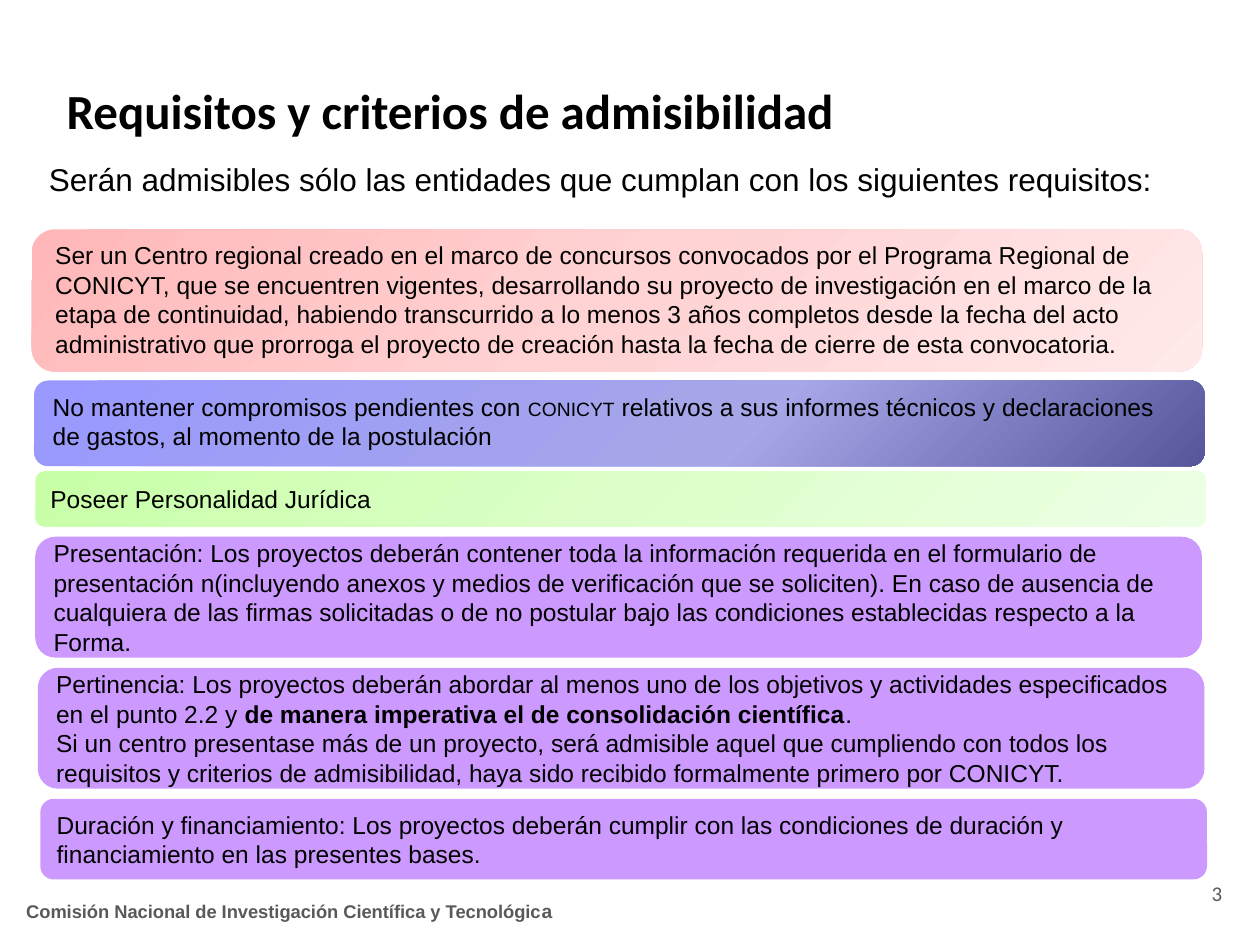
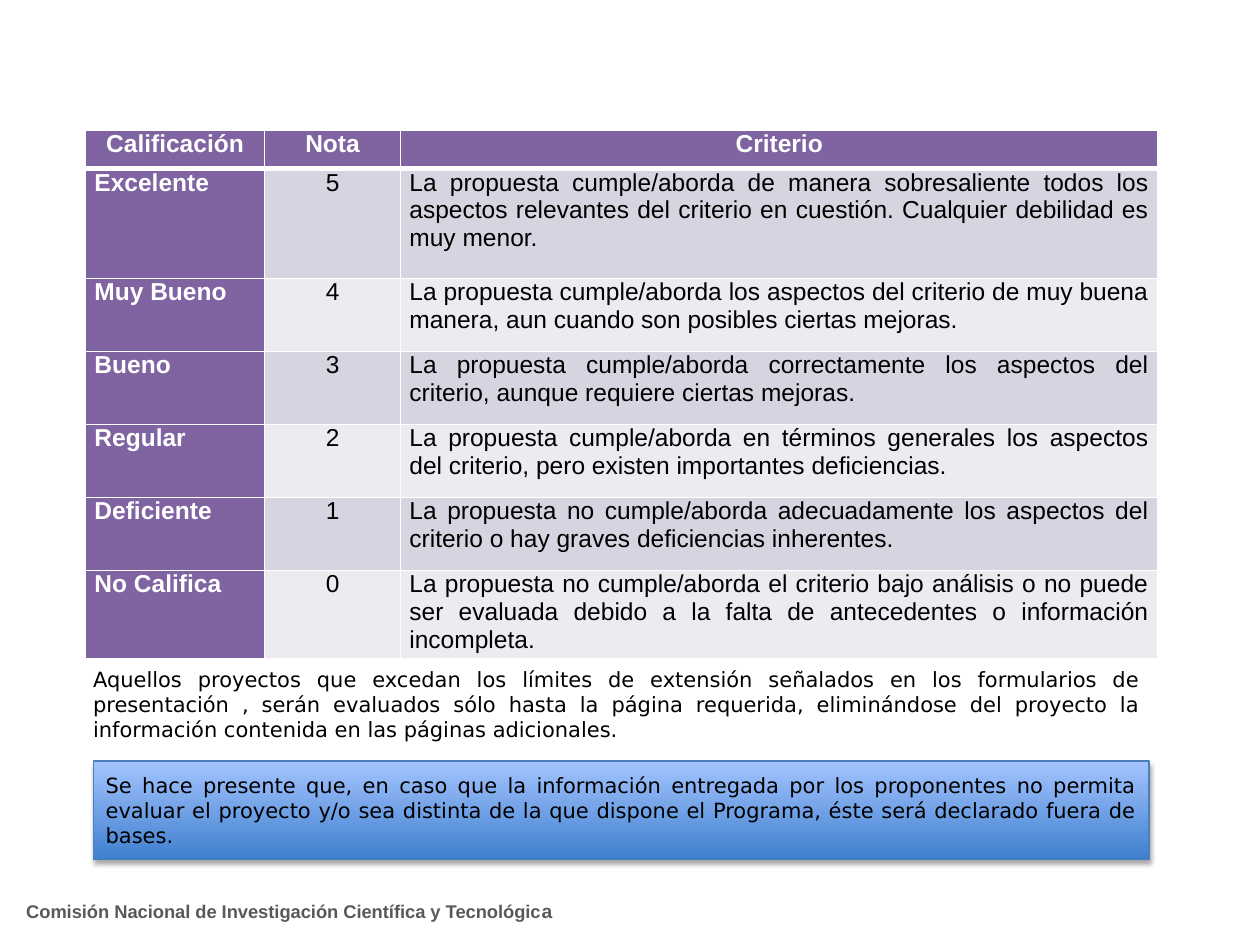
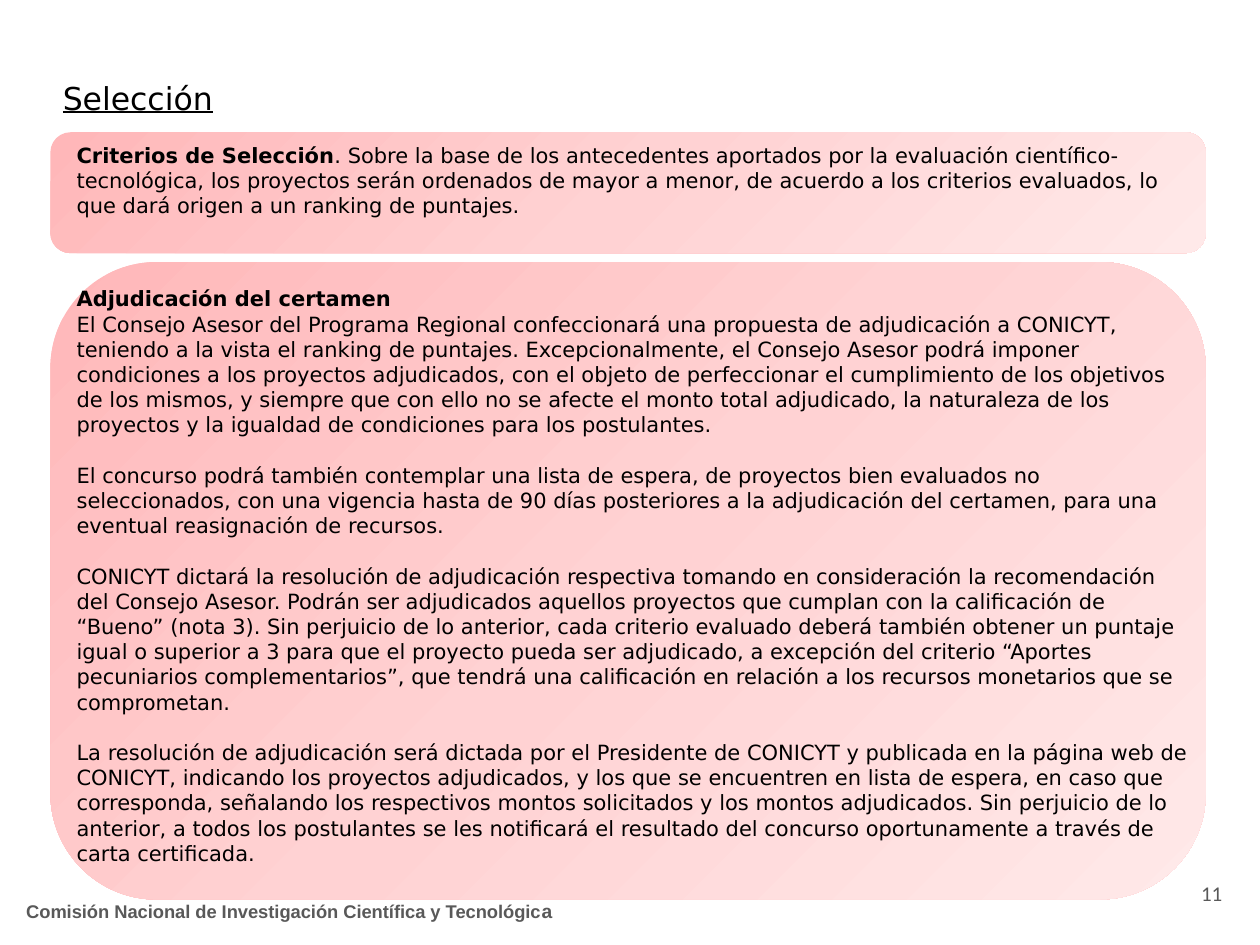
from lxml.etree import SubElement
from pptx import Presentation
from pptx.dml.color import RGBColor as Rgb
from pptx.enum.shapes import MSO_SHAPE as Preset
from pptx.enum.text import MSO_ANCHOR as Anchor, PP_ALIGN as Align
from pptx.oxml.ns import qn
from pptx.util import Inches, Pt

COLOURS = {
    "text": "000000",
    "muted": "595959",
    "white": "FFFFFF",
    "lilac": "CC99FF",
    "header": "8064A2",
    "odd_row": "D8D3E0",
    "even_row": "EDEAF0",
    "note_line": "4B7EBC",
}
GRADIENTS = {
    "pink": ([(0, "FFB7B9"), (50, "FFD2D3"), (100, "FFE9E9")], 45),
    "green": ([(0, "C8FFA7"), (50, "DCFFC9"), (100, "EDFFE5")], 45),
    "blue": ([(0, "3F80CE"), (100, "A4C4FF")], 270),
    "indigo": ([(0, "56569C"), (39, "A6A6E8"), (100, "9999FF")], None),
}
BODY = {"name": "Arial", "size": Pt(14)}
DETAIL = {"name": "DejaVu Sans", "size": Pt(12)}
TITLE = {"name": "Calibri", "size": Pt(28), "bold": True}
INTRO = {"name": "Arial", "size": Pt(18)}
SECTION = {"name": "DejaVu Sans", "size": Pt(18), "underline": True}
NUMBER = {"name": "Calibri", "size": Pt(12)}
FOOTER = {"name": "Arial", "size": Pt(10.5), "bold": True}
BOLD = {"bold": True}
JUSTIFIED = {"alignment": Align.JUSTIFY}

FOOTER_TEXT = [
    [("Comisión Nacional de Investigación Científica y Tecnológic", {}), ("a", {"size": Pt(11)})]
]
CENTRE = "Ser un Centro regional creado en el marco de concursos convocados por el Programa Regional de CONICYT, que se encuentren vigentes, desarrollando su proyecto de investigación en el marco de la etapa de continuidad, habiendo transcurrido a lo menos 3 años completos desde la fecha del acto administrativo que prorroga el proyecto de creación hasta la fecha de cierre de esta convocatoria."
COMMITMENTS = [
    ("No mantener compromisos pendientes con ", {}),
    ("CONICYT", {"size": Pt(11)}),
    (" relativos a sus informes técnicos y declaraciones de gastos, al momento de la postulación", {}),
]
PRESENTATION = "Presentación: Los proyectos deberán contener toda la información requerida en el formulario de presentación n(incluyendo anexos y medios de verificación que se soliciten). En caso de ausencia de cualquiera de las firmas solicitadas o de no postular bajo las condiciones establecidas respecto a la Forma."
RELEVANCE = [
    [
        ("Pertinencia: Los proyectos deberán abordar al menos uno de los objetivos y actividades especificados en el punto 2.2 y ", {}),
        ("de manera imperativa el de consolidación científica", BOLD),
        (".", {}),
    ],
    "Si un centro presentase más de un proyecto, será admisible aquel que cumpliendo con todos los requisitos y criterios de admisibilidad, haya sido recibido formalmente primero por CONICYT.",
]
DURATION = "Duración y financiamiento: Los proyectos deberán cumplir con las condiciones de duración y financiamiento en las presentes bases."
GRADES = [
    ("Calificación", "Nota", "Criterio"),
    ("Excelente", "5", "La propuesta cumple/aborda de manera sobresaliente todos los aspectos relevantes del criterio en cuestión. Cualquier debilidad es muy menor."),
    ("Muy Bueno", "4", "La propuesta cumple/aborda los aspectos del criterio de muy buena manera, aun cuando son posibles ciertas mejoras."),
    ("Bueno", "3", "La propuesta cumple/aborda correctamente los aspectos del criterio, aunque requiere ciertas mejoras."),
    ("Regular", "2", "La propuesta cumple/aborda en términos generales los aspectos del criterio, pero existen importantes deficiencias."),
    ("Deficiente", "1", "La propuesta no cumple/aborda adecuadamente los aspectos del criterio o hay graves deficiencias inherentes."),
    ("No Califica", "0", "La propuesta no cumple/aborda el criterio bajo análisis o no puede ser evaluada debido a la falta de antecedentes o información incompleta."),
]
LENGTH_LIMIT = "Aquellos proyectos que excedan los límites de extensión señalados en los formularios de presentación , serán evaluados sólo hasta la página requerida, eliminándose del proyecto la información contenida en las páginas adicionales."
WARNING = "Se hace presente que, en caso que la información entregada por los proponentes no permita evaluar el proyecto y/o sea distinta de la que dispone el Programa, éste será declarado fuera de bases."
SELECTION = [
    ("Criterios de Selección", BOLD),
    (". Sobre la base de los antecedentes aportados por la evaluación científico-tecnológica, los proyectos serán ordenados de mayor a menor, de acuerdo a los criterios evaluados, lo que dará origen a un ranking de puntajes.", {}),
]
AWARD = [
    [("Adjudicación del certamen", BOLD)],
    "El Consejo Asesor del Programa Regional confeccionará una propuesta de adjudicación a CONICYT, teniendo a la vista el ranking de puntajes. Excepcionalmente, el Consejo Asesor podrá imponer condiciones a los proyectos adjudicados, con el objeto de perfeccionar el cumplimiento de los objetivos de los mismos, y siempre que con ello no se afecte el monto total adjudicado, la naturaleza de los proyectos y la igualdad de condiciones para los postulantes.",
    "El concurso podrá también contemplar una lista de espera, de proyectos bien evaluados no seleccionados, con una vigencia hasta de 90 días posteriores a la adjudicación del certamen, para una eventual reasignación de recursos.",
    "CONICYT dictará la resolución de adjudicación respectiva tomando en consideración la recomendación del Consejo Asesor. Podrán ser adjudicados aquellos proyectos que cumplan con la calificación de “Bueno” (nota 3). Sin perjuicio de lo anterior, cada criterio evaluado deberá también obtener un puntaje igual o superior a 3 para que el proyecto pueda ser adjudicado, a excepción del criterio “Aportes pecuniarios complementarios”, que tendrá una calificación en relación a los recursos monetarios que se comprometan.",
    "La resolución de adjudicación será dictada por el Presidente de CONICYT y publicada en la página web de CONICYT, indicando los proyectos adjudicados, y los que se encuentren en lista de espera, en caso que corresponda, señalando los respectivos montos solicitados y los montos adjudicados. Sin perjuicio de lo anterior, a todos los postulantes se les notificará el resultado del concurso oportunamente a través de carta certificada.",
]


def apply(target, values):
    for attribute, value in values.items():
        setattr(target, attribute, value)


def rgb(name):
    return Rgb.from_string(COLOURS[name])


def write(frame, paragraphs, font, layout=None, colour="text"):
    frame.word_wrap = True
    for index, content in enumerate(paragraphs):
        paragraph = frame.paragraphs[0] if index == 0 else frame.add_paragraph()
        apply(paragraph, {"alignment": Align.LEFT, **(layout or {})})
        runs = [(content, {})] if isinstance(content, str) else content
        for text, changes in runs:
            run = paragraph.add_run()
            run.text = text
            apply(run.font, {**font, **changes})
            run.font.color.rgb = rgb(colour)


def add_text(slide, place, paragraphs, font, layout=None, colour="text", anchor=Anchor.TOP):
    frame = slide.shapes.add_textbox(*map(Inches, place)).text_frame
    frame.vertical_anchor = anchor
    write(frame, paragraphs, font, layout, colour)
    return frame


def fill_gradient(shape, name):
    stops, angle = GRADIENTS[name]
    shape.fill.gradient()
    gradient = shape._element.spPr.find(qn("a:gradFill"))
    for child in list(gradient):
        gradient.remove(child)
    stop_list = SubElement(gradient, qn("a:gsLst"))
    for position, colour in stops:
        stop = SubElement(stop_list, qn("a:gs"), pos=str(position * 1000))
        SubElement(stop, qn("a:srgbClr"), val=colour)
    if angle is None:
        radial = SubElement(gradient, qn("a:path"), path="circle")
        SubElement(radial, qn("a:fillToRect"), l="100000", t="100000")
    else:
        SubElement(gradient, qn("a:lin"), ang=str(angle * 60000), scaled="0")


def add_box(slide, place, fill, paragraphs=(), font=BODY, layout=None, preset=Preset.ROUNDED_RECTANGLE):
    box = slide.shapes.add_shape(preset, *map(Inches, place))
    box.shadow.inherit = False
    box.line.fill.background()
    if fill in GRADIENTS:
        fill_gradient(box, fill)
    else:
        box.fill.solid()
        box.fill.fore_color.rgb = rgb(fill)
    box.text_frame.vertical_anchor = Anchor.MIDDLE
    write(box.text_frame, paragraphs, font, layout)
    return box


def add_soft_shadow(box):
    effects = box._element.spPr.find(qn("a:effectLst"))
    shadow = SubElement(effects, qn("a:outerShdw"), blurRad=str(Pt(3.1)), dist=str(Pt(1.8)),
                        dir="5400000", rotWithShape="0")
    black = SubElement(shadow, qn("a:srgbClr"), val=COLOURS["text"])
    SubElement(black, qn("a:alpha"), val="35000")


def add_borders(cell, top, bottom):
    properties = cell._tc.get_or_add_tcPr()
    for side, width in (("L", 1), ("R", 1), ("T", top), ("B", bottom)):
        border = SubElement(properties, qn(f"a:ln{side}"), w=str(Pt(width)))
        fill = SubElement(border, qn("a:solidFill"))
        SubElement(fill, qn("a:srgbClr"), val=COLOURS["white"])


def add_grades(slide, place, widths, heights):
    table = slide.shapes.add_table(len(GRADES), len(widths), *map(Inches, place)).table
    for column, width in zip(table.columns, widths):
        column.width = Inches(width)
    for row, height in zip(table.rows, heights):
        row.height = Inches(height)
    for r, texts in enumerate(GRADES):
        for c, text in enumerate(texts):
            cell = table.cell(r, c)
            heading = r == 0 or c == 0
            centred = r == 0 or c == 1
            apply(cell, {"margin_left": Inches(0.07), "margin_right": Inches(0.07),
                         "margin_top": 0, "margin_bottom": 0})
            add_borders(cell, 3 if r == 1 else 1, 3 if r == 0 else 1)
            cell.fill.solid()
            cell.fill.fore_color.rgb = rgb("header" if heading else "odd_row" if r % 2 else "even_row")
            layout = {"alignment": Align.CENTER if centred else Align.JUSTIFY, "space_after": Pt(6)}
            write(cell.text_frame, [text], {**BODY, "bold": heading}, layout,
                  "white" if heading else "text")


def add_page(deck, number=None):
    slide = deck.slides.add_slide(deck.slide_layouts[6])
    add_text(slide, (0.11, 6.77, 7.81, 0.92), FOOTER_TEXT, FOOTER, colour="muted", anchor=Anchor.MIDDLE)
    if number:
        add_text(slide, (7.47, 6.89, 2.33, 0.4), [number], NUMBER, {"alignment": Align.RIGHT},
                 "muted", Anchor.MIDDLE)
    return slide


def build_requirements(deck):
    slide = add_page(deck, "3")
    add_text(slide, (0.43, 0.36, 7.48, 0.7), ["Requisitos y criterios de admisibilidad"], TITLE,
             {**JUSTIFIED, "line_spacing": 1.5})
    add_text(slide, (0.29, 1.22, 9.3, 0.4),
             ["Serán admisibles sólo las entidades que cumplan con los siguientes requisitos:"], INTRO)
    add_box(slide, (0.25, 1.82, 9.29, 1.13), "pink")
    add_text(slide, (0.34, 1.86, 9.13, 1.04), [CENTRE], BODY)
    add_box(slide, (0.27, 3.02, 9.29, 0.68), "indigo")
    add_text(slide, (0.32, 3.06, 9.13, 0.57), [COMMITMENTS], BODY)
    add_box(slide, (0.28, 3.74, 9.29, 0.44), "green", ["Poseer Personalidad Jurídica"])
    add_box(slide, (0.28, 4.26, 9.26, 0.96), "lilac", [PRESENTATION])
    add_box(slide, (0.3, 5.3, 9.26, 0.96), "lilac", RELEVANCE)
    add_box(slide, (0.32, 6.34, 9.26, 0.64), "lilac", [DURATION])


def build_grades(deck):
    slide = add_page(deck)
    add_grades(slide, (0.68, 1.03, 8.51, 4.09), (1.42, 1.08, 6.01), [0.31, 0.87] + [0.58] * 5)
    add_text(slide, (0.64, 5.24, 8.51, 0.75), [LENGTH_LIMIT], DETAIL, JUSTIFIED)
    note = add_box(slide, (0.74, 6.04, 8.38, 0.78), "blue", [WARNING], DETAIL, JUSTIFIED, Preset.RECTANGLE)
    note.line.color.rgb = rgb("note_line")
    note.line.width = Pt(0.75)
    add_soft_shadow(note)


def build_selection(deck):
    slide = add_page(deck, "11")
    add_text(slide, (0.4, 0.58, 2.76, 0.4), ["Selección"], SECTION)
    add_box(slide, (0.4, 1.05, 9.17, 0.96), "pink")
    add_text(slide, (0.51, 1.08, 9.06, 0.9), [SELECTION], DETAIL)
    add_box(slide, (0.4, 2.08, 9.17, 5.06), "pink")
    award = add_text(slide, (0.51, 2.22, 9.06, 4.8), AWARD, DETAIL)
    for paragraph in award.paragraphs[2:]:
        paragraph.space_before = Pt(14.4)


def main():
    deck = Presentation()
    apply(deck, {"slide_width": Inches(10), "slide_height": Inches(7.5)})
    build_requirements(deck)
    build_grades(deck)
    build_selection(deck)
    deck.save("out.pptx")


if __name__ == "__main__":
    main()
